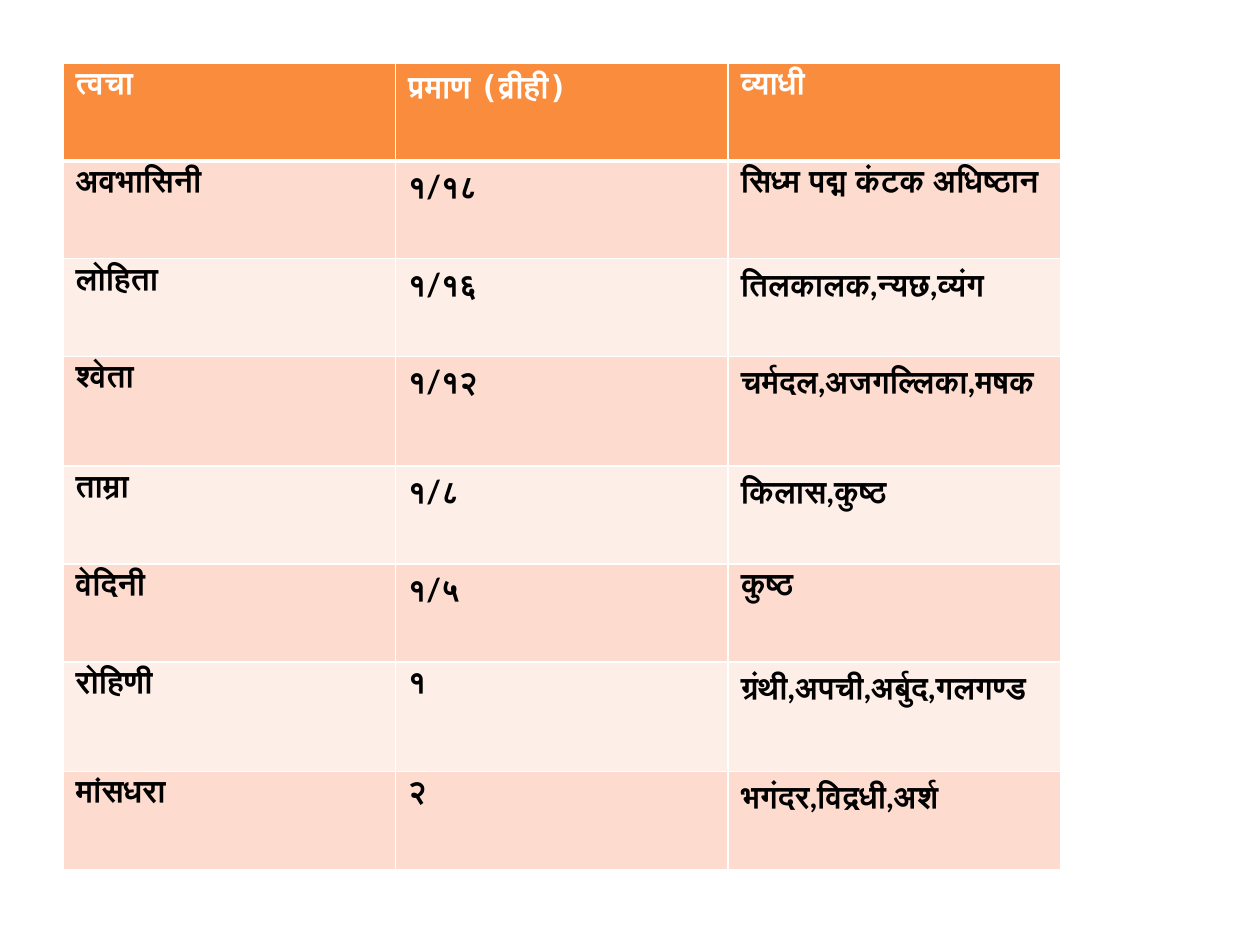
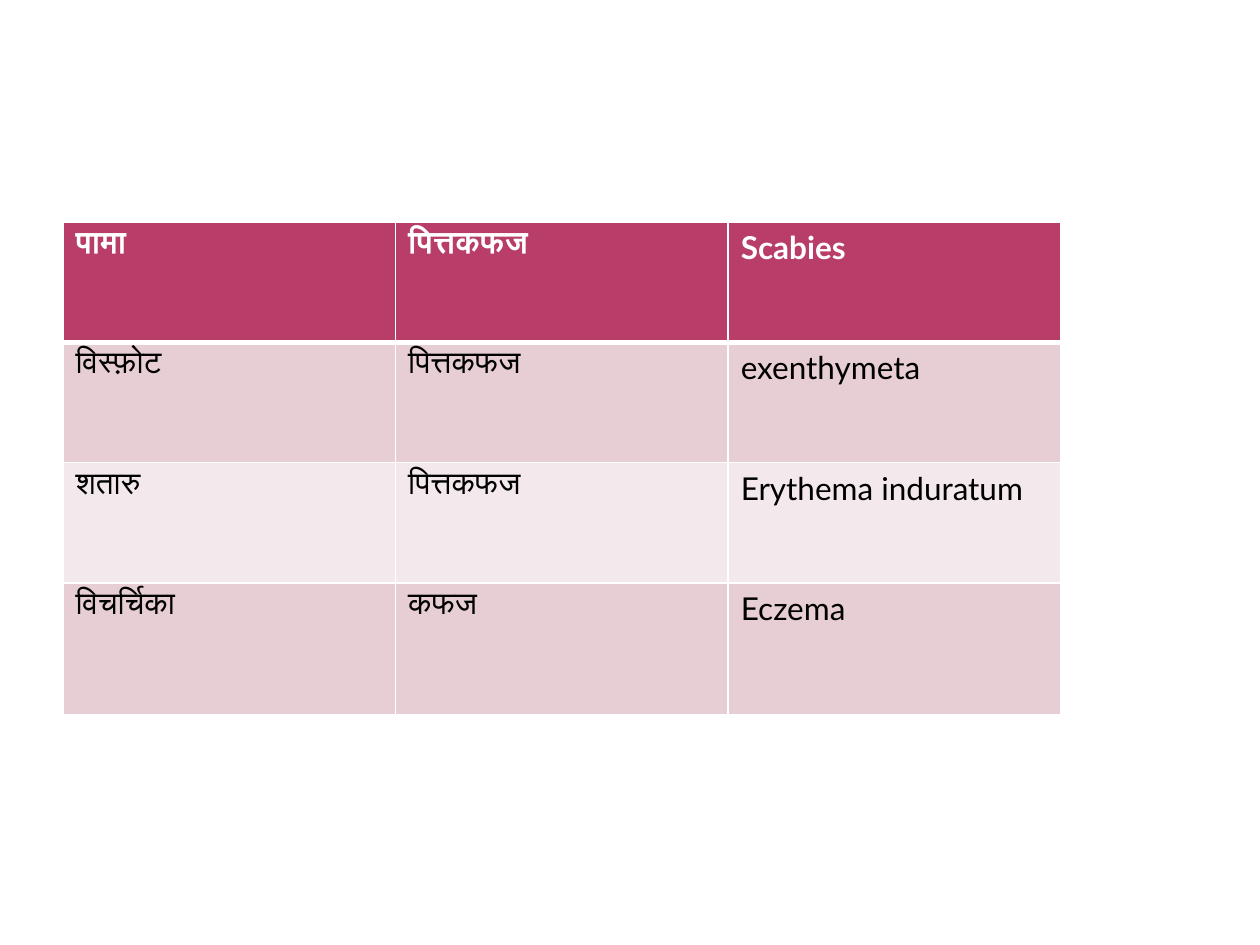
from lxml.etree import SubElement
from pptx import Presentation
from pptx.dml.color import RGBColor as RGB
from pptx.oxml.ns import qn
from pptx.util import Pt

WHITE, BLACK = RGB(255, 255, 255), RGB(0, 0, 0)
ORANGE, PEACH, PALE_PEACH = RGB(0xFA, 0x8D, 0x3D), RGB(0xFD, 0xDB, 0xCE), RGB(0xFE, 0xEE, 0xE8)
BERRY, ROSE, PALE_ROSE = RGB(0xB8, 0x3D, 0x68), RGB(0xE6, 0xCE, 0xD4), RGB(0xF3, 0xE8, 0xEB)
FONT, MONO = "Lato", "DejaVu Sans Mono"
LEFT, COL_WIDTH = 36, 190.08

SKIN_LAYERS = [
    ("त्वचा", "प्रमाण (व्रीही)", "व्याधी"),
    ("अवभासिनी", "१/१८", "सिध्म पद्म कंटक अधिष्ठान"),
    ("लोहिता", "१/१६", "तिलकालक,न्यछ,व्यंग"),
    ("श्वेता", "१/१२", "चर्मदल,अजगल्लिका,मषक"),
    ("ताम्रा", "१/८", "किलास,कुष्ठ"),
    ("वेदिनी", "१/५", "कुष्ठ"),
    ("रोहिणी", "१", "ग्रंथी,अपची,अर्बुद,गलगण्ड"),
    ("मांसधरा", "२", "भगंदर,विद्रधी,अर्श"),
]
SKIN_DISEASES = [
    ("पामा", "पित्तकफज", "Scabies"),
    ("विस्फ़ोट", "पित्तकफज", "exenthymeta"),
    ("शतारु", "पित्तकफज", "Erythema induratum"),
    ("विचर्चिका", "कफज", "Eczema"),
]
TABLES = [
    dict(rows=SKIN_LAYERS, top=36, height=55.9, tall={3: 62.7, 6: 62.7},
         header=ORANGE, bands=(PEACH, PALE_PEACH), bold_body=True),
    dict(rows=SKIN_DISEASES, top=126.8, height=68.8, tall={3: 75},
         header=BERRY, bands=(ROSE, PALE_ROSE), bold_body=False),
]


def add_borders(cell, row):
    """Draw white cell borders, thicker below the header row."""
    widths = {"L": 1, "R": 1, "T": 3 if row == 1 else 1, "B": 3 if row == 0 else 1}
    for side, width in widths.items():
        ln = SubElement(cell._tc.get_or_add_tcPr(), qn(f"a:ln{side}"), w=str(Pt(width)))
        SubElement(SubElement(ln, qn("a:solidFill")), qn("a:srgbClr"), val=str(WHITE))


def write_text(cell, text, bold, color):
    """Write the cell text, with any bracketed part in the mono font."""
    p = cell.text_frame.paragraphs[0]
    label, bracket, unit = text.partition("(")
    for part, font in ((label, FONT), (bracket + unit, MONO)):
        if part:
            r = p.add_run()
            r.text = part
            for name, value in dict(name=font, size=Pt(18), bold=bold).items():
                setattr(r.font, name, value)
            r.font.color.rgb = color


def add_table(s, rows, top, height, tall, header, bands, bold_body):
    """Add a table with a coloured header and alternating bands."""
    heights = [tall.get(i, height) for i in range(len(rows))]
    cols = len(rows[0])
    table = s.shapes.add_table(len(rows), cols, Pt(LEFT), Pt(top),
                               Pt(COL_WIDTH * cols), Pt(sum(heights))).table
    for column in table.columns:
        column.width = Pt(COL_WIDTH)
    for i, texts in enumerate(rows):
        table.rows[i].height = Pt(heights[i])
        for j, text in enumerate(texts):
            cell = table.cell(i, j)
            add_borders(cell, i)
            cell.fill.solid()
            cell.fill.fore_color.rgb = bands[(i - 1) % 2] if i else header
            write_text(cell, text, bold_body if i else True, BLACK if i else WHITE)


def main():
    """Build one slide for each table."""
    prs = Presentation()
    prs.slide_width, prs.slide_height = Pt(720), Pt(540)
    for spec_table in TABLES:
        add_table(prs.slides.add_slide(prs.slide_layouts[6]), **spec_table)
    prs.save("out.pptx")


if __name__ == "__main__":
    main()
